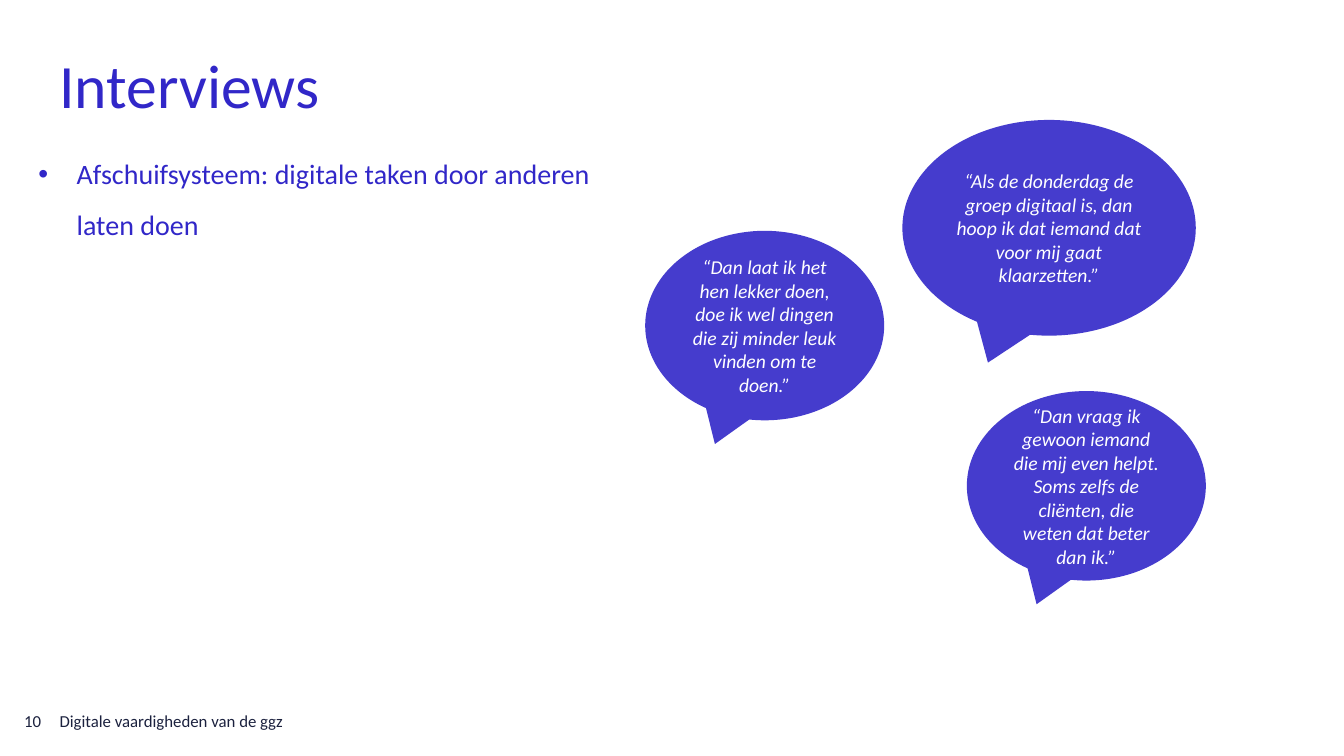
from pptx import Presentation
from pptx.dml.color import RGBColor as Rgb
from pptx.enum.shapes import MSO_SHAPE as Shape
from pptx.enum.text import MSO_ANCHOR as Anchor, MSO_AUTO_SIZE as Fit, PP_ALIGN as Align
from pptx.oxml.ns import qn
from pptx.util import Inches, Pt
from lxml import etree

COLORS = {"blue": "3127C8", "dark": "1B213E", "white": "FFFFFF"}


def place(shape, left, top, width, height):
    shape.left, shape.top = Inches(left), Inches(top)
    shape.width, shape.height = Inches(width), Inches(height)


def write(shape, text, size, color, align=Align.LEFT, anchor=Anchor.MIDDLE, inset=0):
    frame = shape.text_frame
    frame.word_wrap = True
    frame.auto_size = Fit.NONE
    frame.vertical_anchor = anchor
    frame.margin_left = frame.margin_right = Inches(inset)
    frame.margin_top = frame.margin_bottom = Inches(inset / 2)
    para = frame.paragraphs[0]
    para.alignment = align
    para.space_before = Pt(0)
    run = para.add_run()
    run.text = text
    run.font.name = "Calibri"
    run.font.size = Pt(size)
    run.font.color.rgb = Rgb.from_string(COLORS[color])
    return para


deck = Presentation()
deck.slide_width, deck.slide_height = Inches(13.33), Inches(7.5)
slide = deck.slides.add_slide(deck.slide_layouts[1])

# Title
title = slide.shapes.title
place(title, 0.59, 0.21, 12.15, 1.25)
write(title, "Interviews", 44, "blue")

# Bullet list
body = slide.placeholders[1]
place(body, 0.38, 1.39, 5.87, 2.14)
para = write(body, "Afschuifsysteem: digitale taken door anderen laten doen",
             20, "blue", anchor=Anchor.TOP)
para.line_spacing = Pt(36)
para.space_after = Pt(6)
props = para._p.get_or_add_pPr()
props.set("marL", str(Inches(0.38)))
props.set("indent", str(Inches(-0.38)))
etree.SubElement(props, qn("a:buFont")).set("typeface", "Arial")
etree.SubElement(props, qn("a:buChar")).set("char", "•")

# Footer and page number
for left, width, text in [(0.59, 4.22, "Digitale vaardigheden van de ggz"),
                          (0.24, 0.28, "10")]:
    box = slide.shapes.add_textbox(Inches(left), Inches(6.95), Inches(width), Inches(0.4))
    write(box, text, 12, "dark")

# Quotes in speech bubbles
quotes = [
    (6.4, 2.29, 2.37, 1.88, "“Dan laat ik het hen lekker doen, doe ik wel dingen "
     "die zij minder leuk vinden om te doen.”"),
    (8.95, 1.19, 2.91, 2.14, "“Als de donderdag de groep digitaal is, dan hoop ik "
     "dat iemand dat voor mij gaat klaarzetten.”"),
    (9.59, 3.88, 2.37, 1.88, "“Dan vraag ik gewoon iemand die mij even helpt. Soms "
     "zelfs de cliënten, die weten dat beter dan ik.”"),
]
for left, top, width, height, text in quotes:
    bubble = slide.shapes.add_shape(Shape.OVAL_CALLOUT, Inches(left), Inches(top),
                                    Inches(width), Inches(height))
    bubble.shadow.inherit = False
    bubble.line.fill.background()
    bubble.fill.solid()
    bubble.fill.fore_color.rgb = Rgb.from_string(COLORS["blue"])
    tint = bubble._element.spPr.find(qn("a:solidFill"))[0]
    etree.SubElement(tint, qn("a:alpha")).set("val", "90000")
    para = write(bubble, text, 14, "white", Align.CENTER, inset=0.1)
    para.runs[0].font.italic = True

deck.save("out.pptx")
